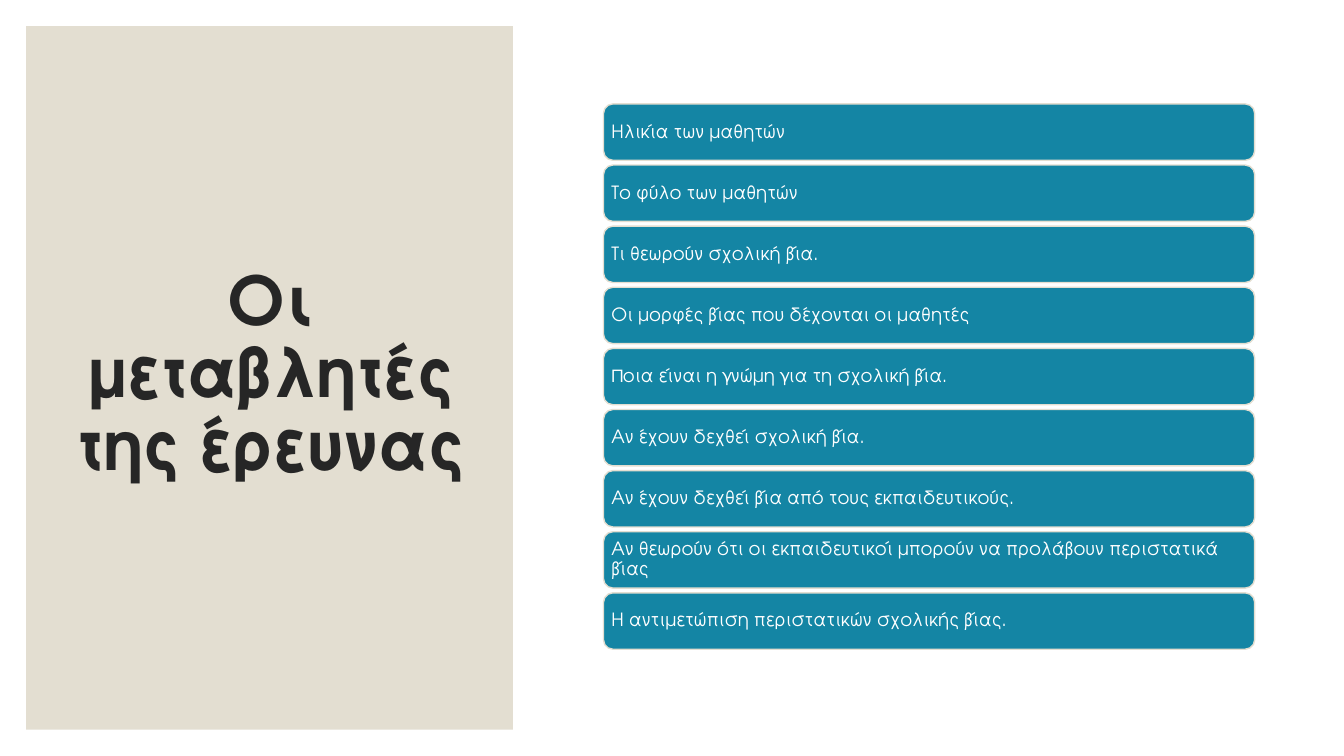
from dataclasses import dataclass

from pptx import Presentation
from pptx.dml.color import RGBColor
from pptx.enum.shapes import MSO_SHAPE as Preset
from pptx.enum.text import MSO_ANCHOR as Anchor, PP_ALIGN as Align
from pptx.util import Cm, Pt

TITLE = "Οι μεταβλητές της έρευνας"
VARIABLES = [
    "Ηλικία των μαθητών",
    "Το φύλο των μαθητών",
    "Τι θεωρούν σχολική βία.",
    "Οι μορφές βίας που δέχονται οι μαθητές",
    "Ποια είναι η γνώμη για τη σχολική βία.",
    "Αν έχουν δεχθεί σχολική βία.",
    "Αν έχουν δεχθεί βία από τους εκπαιδευτικούς.",
    "Αν θεωρούν ότι οι εκπαιδευτικοί μπορούν να προλάβουν περιστατικά βίας",
    "Η αντιμετώπιση περιστατικών σχολικής βίας.",
]


@dataclass(frozen=True)
class Theme:
    font: str = "TeX Gyre Adventor"
    sand: RGBColor = RGBColor(0xE3, 0xDE, 0xD1)
    teal: RGBColor = RGBColor(0x14, 0x85, 0xA4)
    ink: RGBColor = RGBColor(0x26, 0x26, 0x26)
    white: RGBColor = RGBColor(0xFF, 0xFF, 0xFF)
    title_size: Pt = Pt(48)
    variable_size: Pt = Pt(13)


THEME = Theme()

PANEL = (Cm(0.66), Cm(0.66), Cm(12.27), Cm(17.73))
TITLE_BOX = (Cm(1.6), Cm(1.55), Cm(10.46), Cm(15.85))
BAR_LEFT, BAR_TOP, BAR_WIDTH, BAR_HEIGHT = Cm(15.21), Cm(2.62), Cm(16.41), Cm(1.42)
BAR_PITCH = Cm(1.54)
BAR_INSET = Cm(0.13)


def add_block(slide, preset, box, fill):
    block = slide.shapes.add_shape(preset, *box)
    block.shadow.inherit = False
    block.fill.solid()
    block.fill.fore_color.rgb = fill
    block.line.fill.background()
    return block


def write(frame, text, size, color, align, bold=False):
    frame.word_wrap = True
    frame.vertical_anchor = Anchor.MIDDLE
    paragraph = frame.paragraphs[0]
    paragraph.text = text
    paragraph.alignment = align
    paragraph.line_spacing = 0.9
    font = paragraph.font
    font.name, font.size, font.bold = THEME.font, size, bold
    font.color.rgb = color


def add_variable(slide, index, variable):
    top = BAR_TOP + index * BAR_PITCH
    bar = add_block(slide, Preset.ROUNDED_RECTANGLE,
                    (BAR_LEFT, top, BAR_WIDTH, BAR_HEIGHT), THEME.teal)
    bar.line.color.rgb = THEME.sand
    bar.line.width = Pt(1)
    frame = bar.text_frame
    frame.margin_left = frame.margin_right = BAR_INSET
    frame.margin_top = frame.margin_bottom = BAR_INSET
    write(frame, variable, THEME.variable_size, THEME.white, Align.LEFT)


def main():
    deck = Presentation()
    deck.slide_width, deck.slide_height = Cm(33.87), Cm(19.05)
    slide = deck.slides.add_slide(deck.slide_layouts[6])

    add_block(slide, Preset.RECTANGLE, PANEL, THEME.sand)
    title = slide.shapes.add_textbox(*TITLE_BOX)
    write(title.text_frame, TITLE, THEME.title_size, THEME.ink, Align.CENTER, bold=True)

    for index, variable in enumerate(VARIABLES):
        add_variable(slide, index, variable)

    deck.save("out.pptx")


if __name__ == "__main__":
    main()
